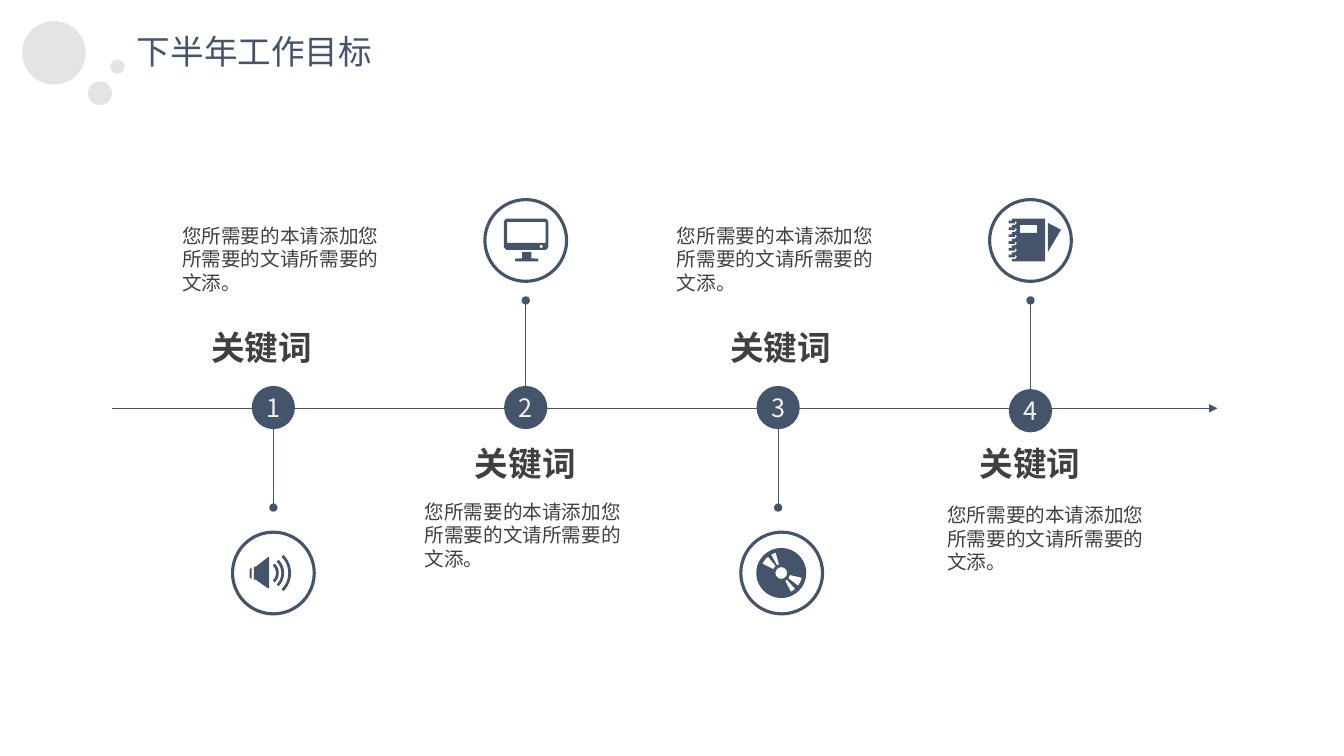
from math import cos, radians, sin

from lxml.etree import SubElement
from pptx import Presentation
from pptx.dml.color import RGBColor
from pptx.enum.shapes import MSO_CONNECTOR as LINK, MSO_SHAPE as KIND
from pptx.enum.text import MSO_ANCHOR as ANCHOR, PP_ALIGN as ALIGN
from pptx.oxml.ns import qn
from pptx.util import Cm, Pt

NAVY = RGBColor(0x44, 0x54, 0x6A)
DARK = RGBColor(0x40, 0x40, 0x40)
PALE = RGBColor(0xF2, 0xF2, 0xF2)
GREY = RGBColor(0xD9, 0xD9, 0xD9)
FONT = "Noto Sans CJK SC"
NOTE = "您所需要的本请添加您所需要的文请所需要的文添。"
DOT = 1.09   # number circle
RING = 2.06  # icon circle
GAP = 6.36   # step to step


def write(frame, text, size=14, color=DARK, bold=None, align=None,
          space=None, wrap=True):
    frame.word_wrap = wrap
    para = frame.paragraphs[0]
    para.alignment = align
    para.line_spacing = space
    run = para.add_run()
    run.text = text
    font = run.font
    font.name, font.size, font.bold = FONT, Pt(size), bold
    font.color.rgb = color
    SubElement(font._element, qn("a:ea"), typeface=FONT)


def label(slide, box, text, **form):
    area = slide.shapes.add_textbox(*map(Cm, box))
    write(area.text_frame, text, **form)


def disc(slide, x, y, size, fill=None, line=None, kind=KIND.OVAL):
    """Add a circle centred on x, y."""
    shape = slide.shapes.add_shape(
        kind, Cm(x - size / 2), Cm(y - size / 2), Cm(size), Cm(size))
    shape.shadow.inherit = False
    if fill is None:
        shape.fill.background()
    else:
        shape.fill.solid()
        shape.fill.fore_color.rgb = fill
    if line is None:
        shape.line.fill.background()
    else:
        shape.line.color.rgb = line
        shape.line.width = Pt(2.25)
    return shape


def link(slide, x1, y1, x2, y2, head=None, tail=None):
    wire = slide.shapes.add_connector(
        LINK.STRAIGHT, Cm(x1), Cm(y1), Cm(x2), Cm(y2))
    wire.line.color.rgb = NAVY
    wire.line.width = Pt(0.5)
    stroke = wire.line._get_or_add_ln()
    for tag, tip in (("a:headEnd", head), ("a:tailEnd", tail)):
        if tip:
            SubElement(stroke, qn(tag), type=tip)
    SubElement(wire._element.spPr, qn("a:effectLst"))


# Icon outlines are in millimetres from the centre of the ring.

def arc(x, y, size, start, end, count=12):
    turns = [radians(start + (end - start) * i / count)
             for i in range(count + 1)]
    return [(x + size * cos(t), y + size * sin(t)) for t in turns]


def band(x, y, small, large, start, end):
    return arc(x, y, large, start, end) + arc(x, y, small, end, start)


def rect(x1, y1, x2, y2):
    return [(x1, y1), (x2, y1), (x2, y2), (x1, y2)]


def sound():
    cone = [(-1.5, -3.9), (-4.4, -1.6), (-4.9, -1.6), (-4.9, 1.7),
            (-4.4, 1.7), (-1.5, 3.8), (-1.1, 3.9), (-1.1, -4.1)]
    back = [(-6, -0.9), (-5.5, -1.4), (-5.5, 1.5), (-6, 1.1)]
    waves = [band(-2, 0, r - 0.35, r + 0.35, -45, 45)
             for r in (3, 4.35, 6.1)]
    return [cone, back] + waves


def screen():
    case = (arc(4.7, -4.5, 1, -90, 0) + arc(4.7, 1.4, 1, 0, 90)
            + arc(-4.5, 1.4, 1, 90, 180) + arc(-4.5, -4.5, 1, 180, 270))
    stand = [(-0.9, 2.9), (1.4, 2.9), (1.4, 4.5), (3.2, 4.6), (3.2, 5.3),
             (-2.7, 5.3), (-2.7, 4.6), (-0.9, 4.5)]
    return [case, stand, rect(-4.7, -4.7, 5, 0.6), arc(3.9, 1.5, 0.4, 0, 360)]


def record():
    mid = (-0.1, 0)
    rays = [band(*mid, 2.2, 5.3, *turn)
            for turn in ((13, 37), (49, 63), (206, 231), (241, 255))]
    return [arc(*mid, 6.3, 0, 360, 40), arc(*mid, 1.5, 0, 360)] + rays


def book():
    hook = [(-4.7, -5), (-5.5, -5), (-5.5, -4.3), (-3.9, -4.3), (-3.9, -5),
            (-3.4, -4.5), (-3.9, -3.9), (-4.7, -3.9)]
    edge = [(x, y + 1.72 * i) for i in range(6) for x, y in hook]
    page = [(3.7, -5.5), (-4.7, -5.5)] + edge + [(-4.7, 5.3), (3.7, 5.3)]
    flap = [(4.4, -4.4), (4.4, 2.9), (7.7, -2.7)]
    return [page, flap, rect(-2.7, -3.9, 1.7, -1.9)]


def icon(slide, x, y, loops):
    disc(slide, x, y, RING, line=NAVY)
    pen = None
    for loop in loops:
        first, *rest = [(Cm(x + a / 10), Cm(y + b / 10)) for a, b in loop]
        if pen is None:
            pen = slide.shapes.build_freeform(*first, scale=1.0)
        else:
            pen.move_to(*first)
        pen.add_line_segments(rest, close=True)
    shape = pen.convert_to_shape()
    shape.shadow.inherit = False
    shape.fill.solid()
    shape.fill.fore_color.rgb = NAVY
    shape.line.fill.background()


def header(slide, x, y):
    for dx, dy, size in ((0.8, 0.8, 1.6), (1.96, 1.82, 0.6),
                         (2.4, 1.15, 0.36)):
        spot = disc(slide, x + dx, y + dy, size, fill=GREY,
                    kind=KIND.FLOWCHART_CONNECTOR)
        tint = spot._element.spPr.find(qn("a:solidFill"))[0]
        SubElement(tint, qn("a:alpha"), val="70000")
    label(slide, (x + 2.64, y + 0.13, 6.5, 1.27), "下半年工作目标",
          size=24, color=NAVY, wrap=False)


def step(slide, x, y, num, draw, shift=0, ring=0, key=-1.85, note=-2.8):
    """Place one step; odd ones hang the icon below the axis."""
    if num % 2:
        stem, face, word, body = (0, 2.52), 4.17, -2.07, -4.76
    else:
        stem, face, word, body = (-2.7, -0.2), -4.21, 0.86, 2.2
    link(slide, x, y + stem[0], x, y + stem[1], head="oval", tail="oval")
    dot = disc(slide, x, y + shift, DOT, fill=NAVY)
    frame = dot.text_frame
    frame.margin_left = frame.margin_right = 0
    frame.margin_top = frame.margin_bottom = 0
    frame.vertical_anchor = ANCHOR.MIDDLE
    write(frame, str(num), size=18, color=PALE, align=ALIGN.CENTER)
    icon(slide, x + ring, y + face, draw())
    label(slide, (x + note, y + body + shift, 5.72, 2.06), NOTE)
    label(slide, (x + key, y + word, 3.68, 1.22), "关键词", size=24,
          bold=True, align=ALIGN.CENTER, space=0.94)


def chain(slide, x, y, width):
    link(slide, x, y, x + width, y, tail="triangle")
    steps = ((sound, dict(key=-2.14, note=-2.55)),
             (screen, {}),
             (record, dict(ring=0.09, key=-1.78)),
             (book, dict(shift=0.08, note=-2.35)))
    for i, (draw, form) in enumerate(steps):
        step(slide, x + 4.07 + i * GAP, y - 0.02, i + 1, draw, **form)


def main():
    deck = Presentation()
    deck.slide_width, deck.slide_height = Cm(33.87), Cm(19.05)
    slide = deck.slides.add_slide(deck.slide_layouts[6])
    header(slide, 0.56, 0.53)
    chain(slide, 2.82, 10.29, 27.86)
    deck.save("out.pptx")


if __name__ == "__main__":
    main()
